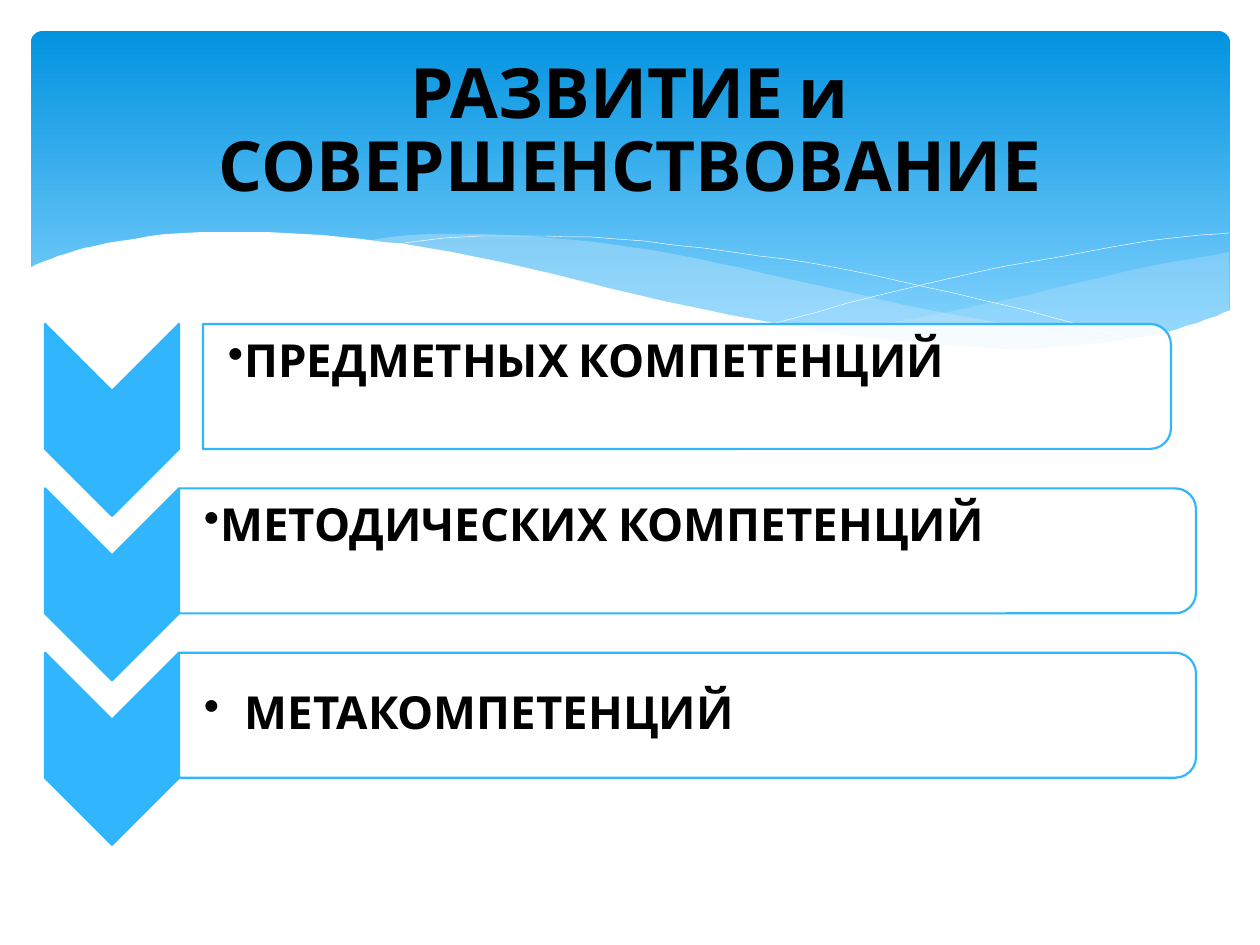
import pptx
import pptx.util
import pptx.dml.color
import pptx.enum.shapes
import pptx.enum.text
import pptx.oxml.ns
from lxml import etree

TITLE = "РАЗВИТИЕ и СОВЕРШЕНСТВОВАНИЕ"
TOP = pptx.enum.text.MSO_ANCHOR.TOP
MIDDLE = pptx.enum.text.MSO_ANCHOR.MIDDLE
ITEMS = [
    dict(text="ПРЕДМЕТНЫХ КОМПЕТЕНЦИЙ", left=203, right=1171, hang=0, anchor=TOP, spacing=1.0),
    dict(text="МЕТОДИЧЕСКИХ КОМПЕТЕНЦИЙ", left=179, right=1196, hang=0, anchor=TOP, spacing=1.0),
    dict(text="МЕТАКОМПЕТЕНЦИЙ", left=179, right=1196, hang=41, anchor=MIDDLE, spacing=0.9),
]
THEME = dict(
    font="Cabin", title_size=39.6, item_size=26, line=1.25, hairline=0.25,
    text="000000", white="FFFFFF", accent="31B6FD", pale="C6E7FC",
    sky=[(0, "0293E0"), (0.9, "83D3FE")],
)
WAVES = [
    dict(curves=[
        [(1229, 252), (1142, 268), (1048, 290), (949, 312), (833, 334)],
        [(833, 334), (906, 344), (984, 349), (1051, 349), (1110, 344), (1160, 334),
         (1195, 324), (1229, 311)]], fill="pale", opacity=29),
    dict(curves=[
        [(360, 241), (433, 234), (529, 236), (616, 245), (699, 259), (793, 280),
         (934, 311), (1056, 333), (1125, 344)],
        [(1125, 344), (1068, 349), (1003, 350), (926, 346), (838, 335), (713, 312),
         (566, 280), (456, 255), (360, 241)]], fill="pale", opacity=40),
    dict(curves=[
        [(389, 246), (445, 238), (524, 236), (616, 239), (732, 252), (838, 268),
         (958, 294), (1047, 316), (1143, 343)]], line="white"),
    dict(curves=[
        [(772, 324), (876, 296), (978, 272), (1091, 251), (1164, 239), (1229, 233)]],
        line="white"),
    dict(curves=[
        [(29, 268), (45, 261), (74, 251), (120, 241), (184, 233), (266, 232),
         (341, 237), (428, 248), (527, 268), (634, 294), (730, 315), (816, 330),
         (892, 340), (959, 346), (1019, 349), (1071, 346), (1147, 336), (1197, 323),
         (1231, 310)],
        [(1231, 415), (29, 415)]], fill="white"),
]
PX = pptx.util.Inches(1) / 126
ROW_TOP, ROW_PITCH, CARD_H = 324, 164.4, 125
ARROW_X, ARROW_W, ARROW_H = 45, 134, 192
SHAPE = pptx.enum.shapes.MSO_SHAPE


def px(*values):
    return [pptx.util.Emu(round(v * PX)) for v in values]


def rgb(value):
    return pptx.dml.color.RGBColor.from_string(value)


def paint(sp, fill=None, line=None, width=THEME["line"], opacity=100):
    sp.shadow.inherit = False
    if fill:
        sp.fill.solid()
        sp.fill.fore_color.rgb = rgb(THEME[fill])
        if opacity < 100:
            color = sp.fill._xPr.find(".//" + pptx.oxml.ns.qn("a:srgbClr"))
            etree.SubElement(color, pptx.oxml.ns.qn("a:alpha"), val=str(opacity * 1000))
    else:
        sp.fill.background()
    if line:
        sp.line.color.rgb = rgb(THEME[line])
        sp.line.width = pptx.util.Pt(width)
    else:
        sp.line.fill.background()


def smooth(knots, steps=4):
    if len(knots) < 3:
        return knots
    ends = [knots[0], *knots, knots[-1]]
    points = [knots[0]]
    for a, b, c, d in zip(ends, ends[1:], ends[2:], ends[3:]):
        for t in (i / steps for i in range(1, steps + 1)):
            points.append(tuple(
                q + t * (r - p) / 2 + t**2 * (p - 2.5 * q + 2 * r - e / 2)
                + t**3 * (3 * q - p - 3 * r + e) / 2
                for p, q, r, e in zip(a, b, c, d)))
    return points


def add_wave(s, curves, fill=None, line=None, opacity=100):
    points = [point for knots in curves for point in smooth(knots)]
    builder = s.shapes.build_freeform(*points[0], scale=PX)
    builder.add_line_segments(points[1:], close=bool(fill))
    paint(builder.convert_to_shape(), fill, line, THEME["hairline"], opacity)


def add_turned(s, kind, x, y, w, h):
    sp = s.shapes.add_shape(kind, *px(x + (w - h) / 2, y + (h - w) / 2, h, w))
    sp.rotation = 90
    return sp


def write(tf, text, size, frame, para):
    for name, value in frame.items():
        setattr(tf, name, value)
    p = tf.paragraphs[0]
    for name, value in para.items():
        setattr(p, name, value)
    r = p.add_run()
    r.text = text
    look = dict(name=THEME["font"], size=pptx.util.Pt(size), bold=True)
    for name, value in look.items():
        setattr(r.font, name, value)
    r.font.color.rgb = rgb(THEME["text"])
    return p


def add_item(s, top, text, left, right, hang, anchor, spacing):
    paint(add_turned(s, SHAPE.CHEVRON, ARROW_X, top, ARROW_W, ARROW_H), "accent", "accent")
    paint(add_turned(s, SHAPE.ROUND_2_SAME_RECTANGLE, left, top, right - left, CARD_H),
          "white", "accent", opacity=90)
    box = s.shapes.add_textbox(*px(left, top + 6, right - left - 6, CARD_H - 13))
    inset, edge = px(25, 2)
    p = write(box.text_frame, text, THEME["item_size"],
              dict(word_wrap=True, vertical_anchor=anchor, margin_left=inset,
                   margin_top=edge, margin_right=edge, margin_bottom=edge),
              dict(line_spacing=spacing))
    pPr = p._p.get_or_add_pPr()
    indent = px(hang)[0]
    pPr.set("marL", str(indent))
    pPr.set("indent", str(-indent))
    etree.SubElement(pPr, pptx.oxml.ns.qn("a:buChar"), char="•")


def main():
    prs = pptx.Presentation()
    prs.slide_width, prs.slide_height = px(1260, 945)
    s = prs.slides.add_slide(prs.slide_layouts[5])

    sky = s.shapes.add_shape(SHAPE.ROUNDED_RECTANGLE, *px(31, 31, 1199, 340))
    sky.adjustments[0] = 0.034
    paint(sky)
    sky.fill.gradient()
    sky.fill.gradient_angle = 270
    for stop, (position, color) in zip(sky.fill.gradient_stops, THEME["sky"]):
        stop.position = position
        stop.color.rgb = rgb(color)

    for wave in WAVES:
        add_wave(s, **wave)
    for row, item in enumerate(ITEMS):
        add_item(s, ROW_TOP + row * ROW_PITCH, **item)

    title = s.shapes.title
    title.left, title.top, title.width, title.height = px(63, 47, 1134, 173)
    write(title.text_frame, TITLE, THEME["title_size"],
          dict(word_wrap=True, vertical_anchor=MIDDLE,
               auto_size=pptx.enum.text.MSO_AUTO_SIZE.NONE),
          dict(alignment=pptx.enum.text.PP_ALIGN.CENTER, line_spacing=0.88))
    s.shapes._spTree.append(title._element)
    prs.save("out.pptx")


if __name__ == "__main__":
    main()
